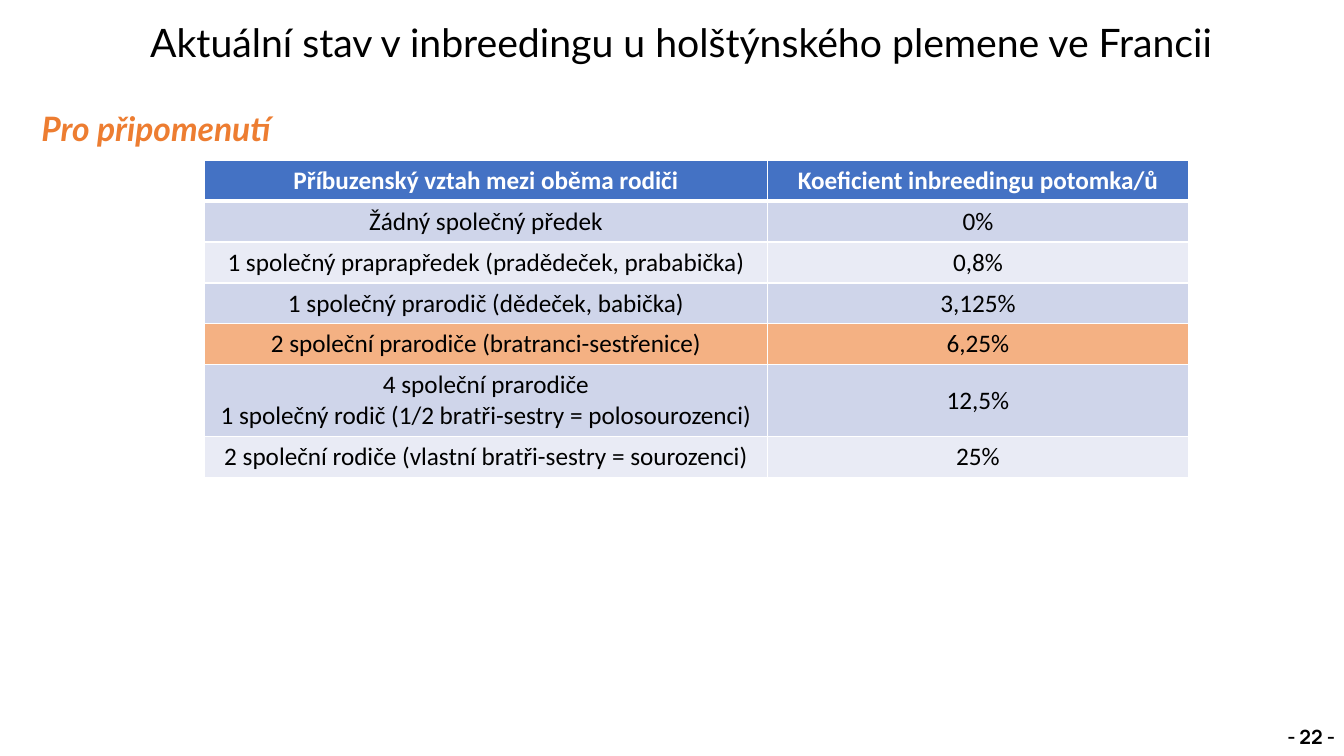
from dataclasses import dataclass

from lxml.etree import SubElement
from pptx import Presentation
from pptx.dml.color import RGBColor
from pptx.enum.shapes import MSO_SHAPE
from pptx.enum.text import MSO_ANCHOR, PP_ALIGN
from pptx.oxml.ns import qn
from pptx.shapes.autoshape import Shape
from pptx.slide import Slide
from pptx.table import _Cell
from pptx.text.text import Font
from pptx.util import Inches, Pt

BLACK = "000000"
WHITE = "FFFFFF"
ORANGE = "ED7D31"
HEADER_BLUE = "4472C4"
DARK_BAND = "CFD5EA"
LIGHT_BAND = "E9EBF5"
HIGHLIGHT = "F4B183"


@dataclass
class Label:
    text: str
    left: float
    top: float
    width: float
    height: float
    size: int
    font: str
    color: str = BLACK
    bold: bool = False
    italic: bool = False
    anchor: MSO_ANCHOR = MSO_ANCHOR.MIDDLE
    alignment: PP_ALIGN = PP_ALIGN.LEFT
    line_spacing: float = 0.9


@dataclass
class KinshipRow:
    relationship: str
    coefficient: str
    fill: str
    height: float = 0.34


PAGE_NUMBER = Label("- 22 -", 12.65, 7.11, 0.71, 0.39, 14, "Manrope", bold=True,
                    alignment=PP_ALIGN.CENTER, line_spacing=1.0)
HEADINGS = [
    Label("Pro připomenutí", 0.37, 1.1, 5.85, 0.43, 24, "Lato", ORANGE,
          bold=True, italic=True, anchor=MSO_ANCHOR.TOP),
    Label("Aktuální stav v inbreedingu u holštýnského plemene ve Francii",
          1.45, 0.17, 11.5, 0.55, 28, "Lato"),
]

ROWS = [
    KinshipRow("Příbuzenský vztah mezi oběma rodiči", "Koeficient inbreedingu potomka/ů", HEADER_BLUE),
    KinshipRow("Žádný společný předek", "0%", DARK_BAND),
    KinshipRow("1 společný praprapředek (pradědeček, prababička)", "0,8%", LIGHT_BAND),
    KinshipRow("1 společný prarodič (dědeček, babička)", "3,125%", DARK_BAND),
    KinshipRow("2 společní prarodiče (bratranci-sestřenice)", "6,25%", HIGHLIGHT),
    KinshipRow("4 společní prarodiče\n1 společný rodič (1/2 bratři-sestry = polosourozenci)",
               "12,5%", DARK_BAND, 0.59),
    KinshipRow("2 společní rodiče (vlastní bratři-sestry = sourozenci)", "25%", LIGHT_BAND),
]
COLUMN_WIDTHS = [5.58, 4.18]


def rgb(color: str) -> RGBColor:
    return RGBColor.from_string(color)


def set_font(font: Font, name: str, size: int, color: str, bold: bool, italic: bool = False) -> None:
    font.name = name
    font.size = Pt(size)
    font.color.rgb = rgb(color)
    font.bold = bold
    font.italic = italic


def write_label(shape: Shape, label: Label) -> None:
    frame = shape.text_frame
    frame.word_wrap = True
    frame.vertical_anchor = label.anchor
    frame.margin_left = frame.margin_right = Inches(0.04)
    frame.margin_top = frame.margin_bottom = Inches(0.02)
    frame.text = label.text
    paragraph = frame.paragraphs[0]
    paragraph.alignment = label.alignment
    paragraph.line_spacing = label.line_spacing
    set_font(paragraph.font, label.font, label.size, label.color, label.bold, label.italic)


def bounds(label: Label) -> list[Inches]:
    return [Inches(length) for length in (label.left, label.top, label.width, label.height)]


def add_heading(slide: Slide, label: Label) -> None:
    write_label(slide.shapes.add_textbox(*bounds(label)), label)


def add_page_number(slide: Slide, label: Label) -> None:
    shape = slide.shapes.add_shape(MSO_SHAPE.ROUNDED_RECTANGLE, *bounds(label))
    shape.adjustments[0] = 0.1
    shape.shadow.inherit = False
    shape.fill.background()
    shape.line.fill.background()
    write_label(shape, label)


def add_borders(cell: _Cell, top: int, bottom: int) -> None:
    properties = cell._tc.get_or_add_tcPr()
    for side, width in (("L", 1), ("R", 1), ("T", top), ("B", bottom)):
        line = SubElement(properties, qn(f"a:ln{side}"), w=str(Pt(width)))
        SubElement(SubElement(line, qn("a:solidFill")), qn("a:srgbClr"), val=WHITE)


def add_kinship_table(slide: Slide, rows: list[KinshipRow]) -> None:
    table = slide.shapes.add_table(
        len(rows), len(COLUMN_WIDTHS), Inches(2.03), Inches(1.59),
        Inches(sum(COLUMN_WIDTHS)), Inches(3.1)).table
    for column, width in zip(table.columns, COLUMN_WIDTHS):
        column.width = Inches(width)
    for index, row in enumerate(rows):
        table.rows[index].height = Inches(row.height)
        is_header = index == 0
        for column_index, text in enumerate((row.relationship, row.coefficient)):
            cell = table.cell(index, column_index)
            add_borders(cell, top=3 if index == 1 else 1, bottom=3 if is_header else 1)
            cell.fill.solid()
            cell.fill.fore_color.rgb = rgb(row.fill)
            cell.vertical_anchor = MSO_ANCHOR.MIDDLE
            cell.text = text
            for paragraph in cell.text_frame.paragraphs:
                paragraph.alignment = PP_ALIGN.CENTER
                set_font(paragraph.font, "Calibri", 18, WHITE if is_header else BLACK, is_header)


def main() -> None:
    presentation = Presentation()
    presentation.slide_width = Inches(13.33)
    presentation.slide_height = Inches(7.5)
    slide = presentation.slides.add_slide(presentation.slide_layouts[6])
    add_page_number(slide, PAGE_NUMBER)
    add_kinship_table(slide, ROWS)
    for heading in HEADINGS:
        add_heading(slide, heading)
    presentation.save("out.pptx")


if __name__ == "__main__":
    main()
